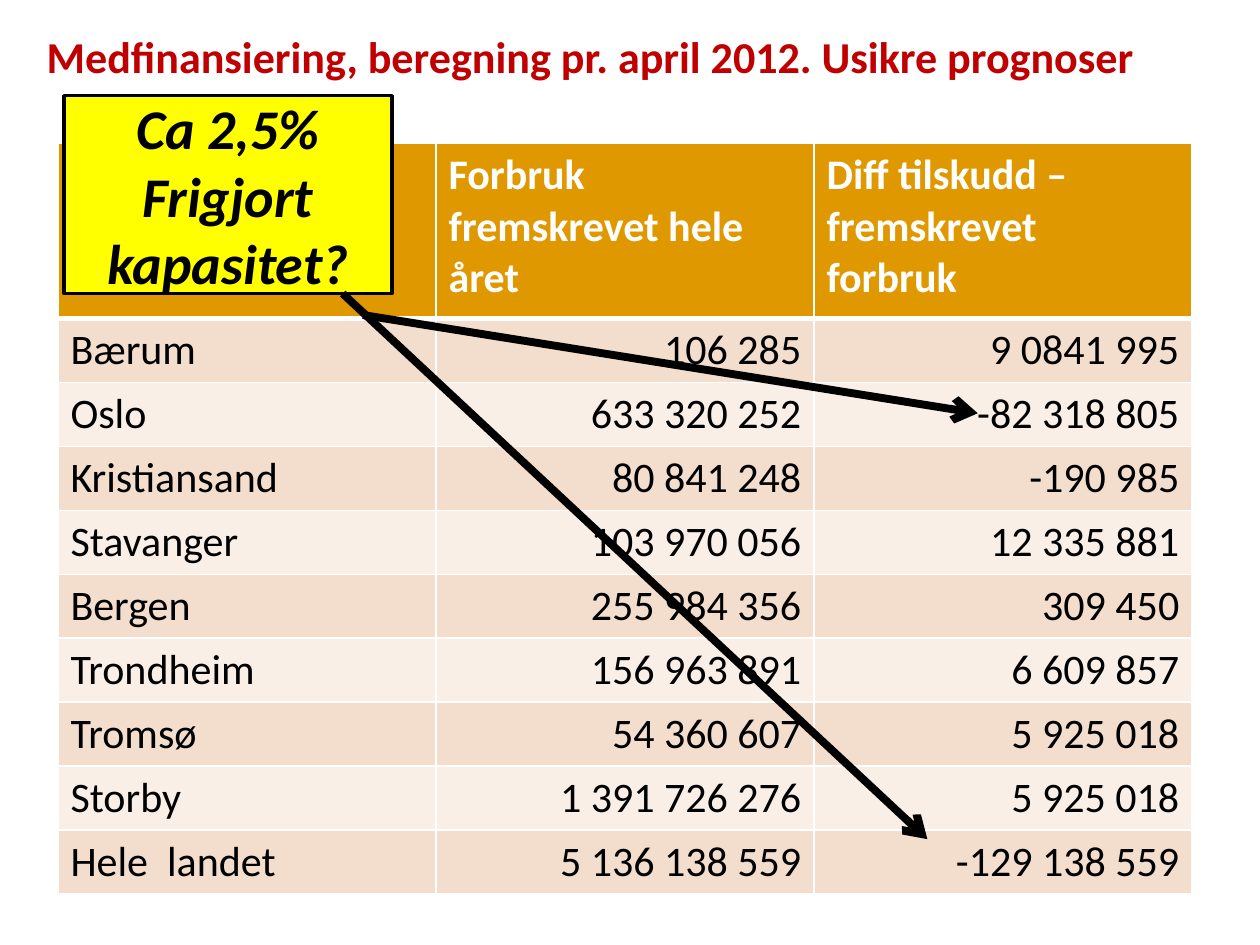
from lxml import etree
from pptx import Presentation
from pptx.dml.color import RGBColor
from pptx.enum.shapes import MSO_CONNECTOR, MSO_SHAPE
from pptx.enum.text import MSO_ANCHOR, MSO_AUTO_SIZE, PP_ALIGN
from pptx.oxml.ns import qn
from pptx.util import Inches, Pt

LEFT, CENTER, RIGHT = PP_ALIGN.LEFT, PP_ALIGN.CENTER, PP_ALIGN.RIGHT
TOP, MIDDLE = MSO_ANCHOR.TOP, MSO_ANCHOR.MIDDLE
RECTANGLE = MSO_SHAPE.RECTANGLE
STRAIGHT = MSO_CONNECTOR.STRAIGHT
NO_AUTOFIT = MSO_AUTO_SIZE.NONE

FONT = "Calibri"
COLORS = {
    "title": "C00000",
    "header": "E09800",
    "odd row": "F3DDCC",
    "even row": "F9EFE7",
    "callout": "FFFF00",
    "white": "FFFFFF",
    "black": "000000",
}

HEADER = ["", "Forbruk fremskrevet hele året", "Diff tilskudd –fremskrevet  forbruk"]
ROWS = [
    ["Bærum", "106 285", "9 0841 995"],
    ["Oslo", "633 320 252", "-82 318 805"],
    ["Kristiansand", "80 841 248", "-190 985"],
    ["Stavanger", "103 970 056", "12 335 881"],
    ["Bergen", "255 984 356", "309 450"],
    ["Trondheim", "156 963 891", "6 609 857"],
    ["Tromsø", "54 360 607", "5 925 018"],
    ["Storby", "1 391 726 276", "5 925 018"],
    ["Hele  landet", "5 136 138 559", "-129 138 559"],
]


def color(name):
    return RGBColor.from_string(COLORS[name])


def write_text(frame, *lines, size=24, ink="black", bold=False, italic=False, align=LEFT):
    """Write each line as one paragraph of the frame."""
    for index, line in enumerate(lines):
        para = frame.add_paragraph() if index else frame.paragraphs[0]
        para.alignment = align
        span = para.add_run()
        span.text = line
        font = span.font
        font.name, font.size = FONT, Pt(size)
        font.bold, font.italic = bold, italic
        font.color.rgb = color(ink)


def add_title(page, text):
    title = page.shapes.title
    title.left, title.top = Inches(0.27), Inches(0.23)
    title.width, title.height = Inches(9), Inches(0.65)
    frame = title.text_frame
    frame.word_wrap, frame.auto_size = True, NO_AUTOFIT
    frame.vertical_anchor = TOP
    frame.margin_left = frame.margin_right = Inches(0.1)
    frame.margin_top = frame.margin_bottom = 0
    write_text(frame, text, size=25.2, ink="title", bold=True)


def set_borders(cell, top=1, bottom=1):
    """Draw white cell borders; the widths are in points."""
    properties = cell._tc.get_or_add_tcPr()
    widths = {"a:lnL": 1, "a:lnR": 1, "a:lnT": top, "a:lnB": bottom}
    for index, (side, width) in enumerate(widths.items()):
        line = etree.Element(qn(side), w=str(Pt(width)))
        fill = etree.SubElement(line, qn("a:solidFill"))
        etree.SubElement(fill, qn("a:srgbClr"), val=COLORS["white"])
        properties.insert(index, line)


def add_cost_table(page):
    rows = [HEADER, *ROWS]
    table = page.shapes.add_table(
        len(rows), len(HEADER), Inches(0.46), Inches(1.14), Inches(9), Inches(5.89)
    ).table
    for row in table.rows:
        row.height = Inches(0.5)
    table.rows[0].height = Inches(1.39)
    for r, values in enumerate(rows):
        is_header = r == 0
        fill = "header" if is_header else "odd row" if r % 2 else "even row"
        for c, value in enumerate(values):
            cell = table.cell(r, c)
            cell.fill.solid()
            cell.fill.fore_color.rgb = color(fill)
            set_borders(cell, top=3 if r == 1 else 1, bottom=3 if is_header else 1)
            write_text(
                cell.text_frame,
                value,
                ink="white" if is_header else "black",
                bold=is_header,
                align=LEFT if is_header or c == 0 else RIGHT,
            )


def add_callout(page, *lines):
    box = page.shapes.add_shape(
        RECTANGLE, Inches(0.51), Inches(0.76), Inches(2.6), Inches(1.57)
    )
    box.shadow.inherit = False
    box.fill.solid()
    box.fill.fore_color.rgb = color("callout")
    box.line.color.rgb = color("black")
    box.line.width = Pt(2)
    box.text_frame.word_wrap = True
    box.text_frame.vertical_anchor = MIDDLE
    write_text(box.text_frame, *lines, size=32, bold=True, italic=True, align=CENTER)


def add_arrow(page, start, end):
    arrow = page.shapes.add_connector(STRAIGHT, *map(Inches, (*start, *end)))
    arrow.line.color.rgb = color("black")
    arrow.line.width = Pt(4.5)
    etree.SubElement(arrow.line._get_or_add_ln(), qn("a:tailEnd"), type="arrow")
    etree.SubElement(arrow._element.spPr, qn("a:effectLst"))


def main():
    deck = Presentation()
    deck.slide_width, deck.slide_height = Inches(10), Inches(7.5)
    page = deck.slides.add_slide(deck.slide_layouts[5])
    add_title(page, "Medfinansiering, beregning pr. april 2012. Usikre prognoser")
    add_cost_table(page)
    add_callout(page, "Ca 2,5%", "Frigjort kapasitet?")
    add_arrow(page, (2.72, 2.33), (7.36, 6.66))
    add_arrow(page, (2.88, 2.5), (7.76, 3.28))
    deck.save("out.pptx")


if __name__ == "__main__":
    main()
